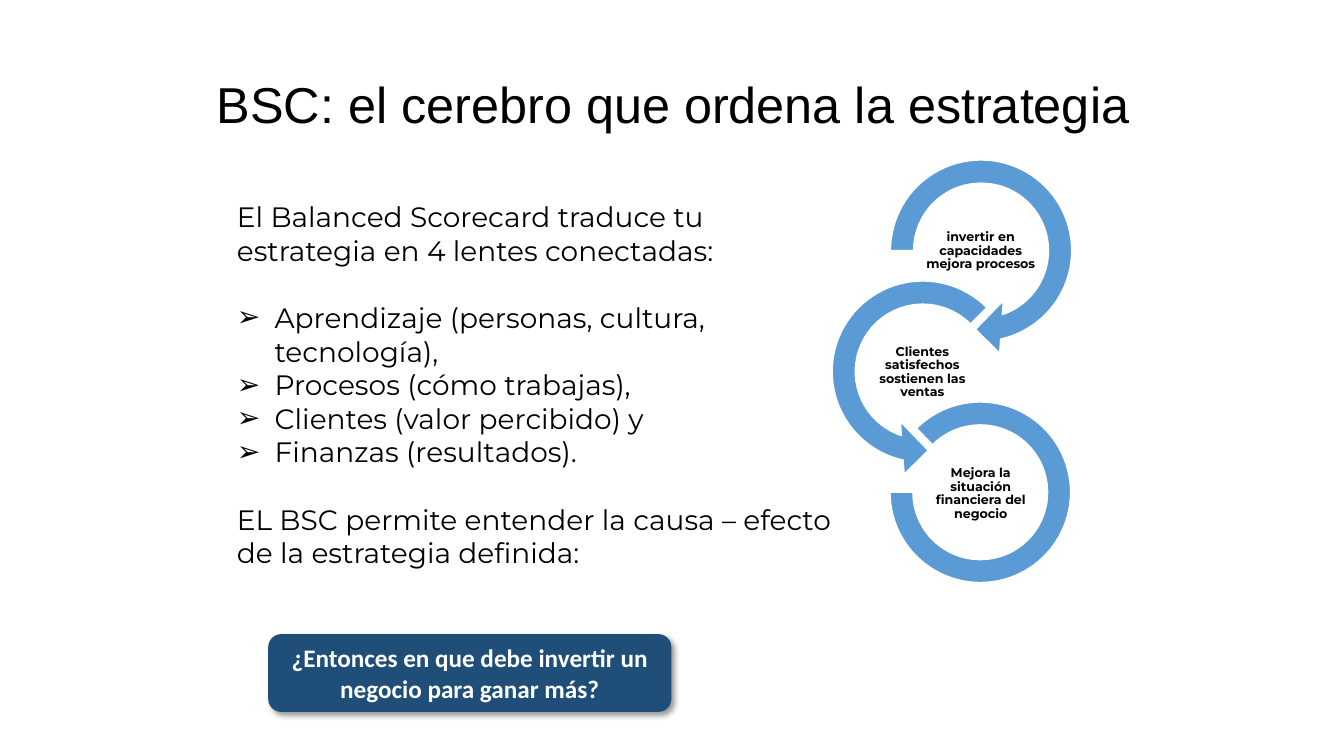
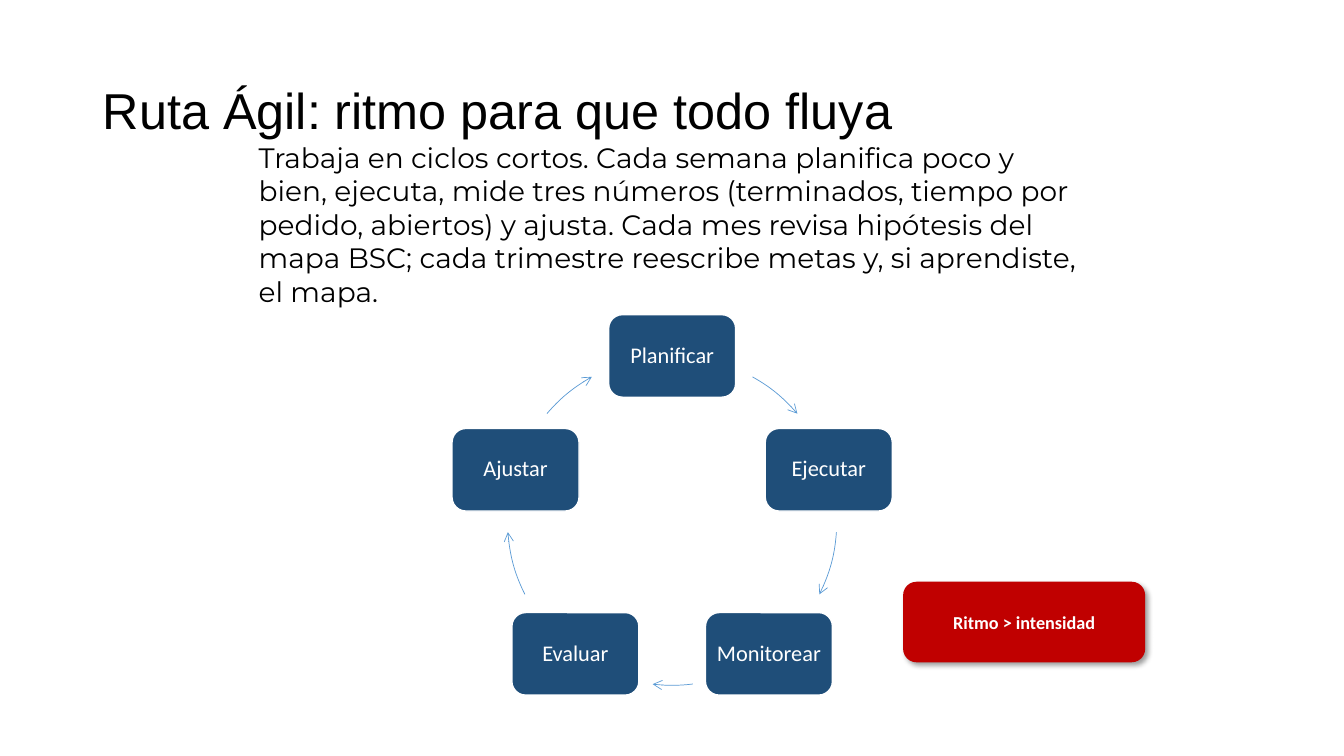
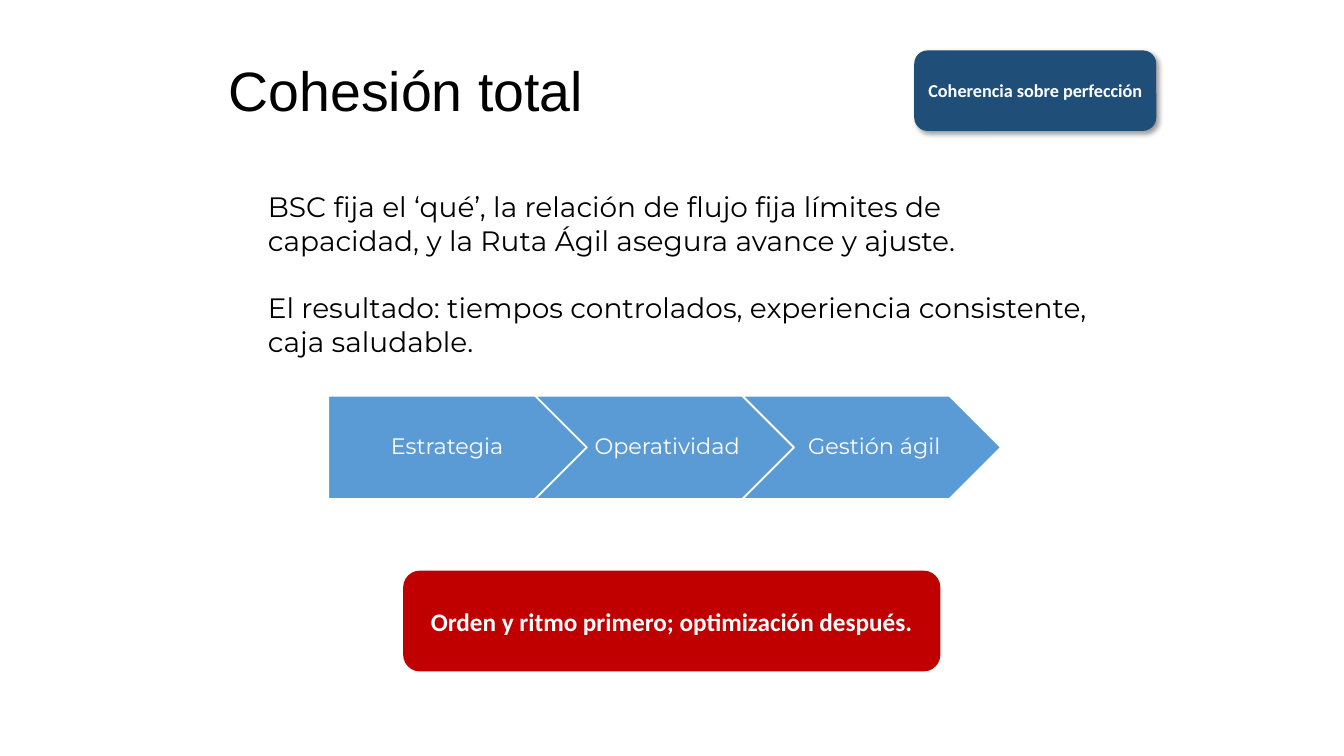
from math import cos, radians, sin

from lxml.etree import SubElement
from pptx import Presentation
from pptx.dml.color import RGBColor
from pptx.enum.shapes import MSO_SHAPE
from pptx.enum.text import MSO_ANCHOR, PP_ALIGN
from pptx.oxml.ns import qn
from pptx.util import Cm, Pt

BLACK, WHITE = "000000", "FFFFFF"
NAVY, BLUE, RED = "1F4E79", "5B9BD5", "C00000"
HEAD, BODY, LABEL = "Arial", "Montserrat", "Calibri"


def color(code):
    return RGBColor.from_string(code)


def place(box):
    return [Cm(side) for side in box]


def add_bullet(para):
    props = para._p.get_or_add_pPr()
    props.set("marL", str(Cm(0.95)))
    props.set("indent", str(-Cm(0.95)))
    SubElement(props, qn("a:buFont"), typeface="Arial")
    SubElement(props, qn("a:buChar"), char="➢")


def write(frame, *lines, size=20, font=BODY, ink=BLACK, bold=False, align=PP_ALIGN.LEFT,
          anchor=MSO_ANCHOR.TOP, inset=(0.25, 0.13, 0.25, 0.13), space=1.0,
          bullets=(), gaps=()):
    frame.word_wrap = True
    frame.vertical_anchor = anchor
    sides = [Cm(side) for side in inset]
    frame.margin_left, frame.margin_top, frame.margin_right, frame.margin_bottom = sides
    for index, line in enumerate(lines):
        para = frame.add_paragraph() if index else frame.paragraphs[0]
        if index in bullets:
            add_bullet(para)
        if index in gaps:
            para.space_before = Pt(24)
        para.alignment = align
        para.line_spacing = space
        run = para.add_run()
        run.text = line
        run.font.size = Pt(size)
        run.font.name = font
        run.font.bold = bold
        run.font.color.rgb = color(ink)


def add_text(slide, box, *lines, **style):
    write(slide.shapes.add_textbox(*place(box)).text_frame, *lines, **style)


def add_title(slide, box, words, size=36):
    add_text(slide, box, words, size=size, font=HEAD, anchor=MSO_ANCHOR.MIDDLE, space=0.9)


def add_form(slide, kind, box, fill, line=None, adjust=()):
    form = slide.shapes.add_shape(kind, *place(box))
    form.shadow.inherit = False
    form.fill.solid()
    form.fill.fore_color.rgb = color(fill)
    if line:
        form.line.color.rgb = color(line)
        form.line.width = Pt(1)
    else:
        form.line.fill.background()
    for index, value in enumerate(adjust):
        form.adjustments[index] = value
    return form


def add_shade(form):
    effects = form._element.spPr.find(qn("a:effectLst"))
    shade = SubElement(effects, qn("a:outerShdw"), blurRad=str(Pt(4)), dist=str(Pt(3)),
                       dir="2700000", algn="tl", rotWithShape="0")
    tint = SubElement(shade, qn("a:srgbClr"), val=BLACK)
    SubElement(tint, qn("a:alpha"), val="40000")


def add_badge(slide, box, words, fill, size=13, shade=True):
    form = add_form(slide, MSO_SHAPE.ROUNDED_RECTANGLE, box, fill)
    if shade:
        add_shade(form)
    write(form.text_frame, words, size=size, font=LABEL, ink=WHITE, bold=True,
          align=PP_ALIGN.CENTER, anchor=MSO_ANCHOR.MIDDLE)


def add_step(slide, kind, box, words, fill, font, inset):
    form = add_form(slide, kind, box, fill, WHITE)
    write(form.text_frame, words, size=16, font=font, ink=WHITE, align=PP_ALIGN.CENTER,
          anchor=MSO_ANCHOR.MIDDLE, inset=inset, space=0.9)


def add_arc(slide, box, start, end):
    arc = slide.shapes.add_shape(MSO_SHAPE.ARC, *place(box))
    arc.shadow.inherit = False
    arc.fill.background()
    arc.line.color.rgb = color(BLUE)
    arc.line.width = Pt(0.5)
    arc.adjustments[0] = start * 0.6
    arc.adjustments[1] = end * 0.6
    SubElement(arc.line._get_or_add_ln(), qn("a:tailEnd"), type="arrow")


def add_rings(slide):
    rings = [
        (MSO_SHAPE.CIRCULAR_ARROW, (22.07, 3.66, 5.31, 5.31),
         (0.11, 11.42, 45, 108, 0.125), 23.24, "invertir en capacidades mejora procesos"),
        (MSO_SHAPE.LEFT_CIRCULAR_ARROW, (20.6, 6.71, 5.31, 5.31),
         (0.11, 11.42, 63, 189, 0.125), 21.77, "Clientes satisfechos sostienen las ventas"),
        (MSO_SHAPE.BLOCK_ARC, (22.43, 10.13, 4.55, 4.55),
         (135, 108, 0.127), 23.24, "Mejora la situación financiera del negocio"),
    ]
    for index, (kind, box, adjust, left, words) in enumerate(rings):
        add_form(slide, kind, box, BLUE, WHITE, adjust)
        add_text(slide, (left, 5.59 + index * 3.06, 2.95, 1.47), words, size=9, bold=True,
                 align=PP_ALIGN.CENTER, anchor=MSO_ANCHOR.MIDDLE, inset=(0.03,) * 4, space=0.9)


def add_cycle(slide, names, spans, center=(16.94, 13.12), radius=4.15, width=3.2, height=2.08):
    mid_x, mid_y = center
    ring = (mid_x - radius, mid_y - radius, 2 * radius, 2 * radius)
    for index, (name, span) in enumerate(zip(names, spans)):
        angle = radians(index * 360 / len(names) - 90)
        box = (mid_x + radius * cos(angle) - width / 2,
               mid_y + radius * sin(angle) - height / 2, width, height)
        add_step(slide, MSO_SHAPE.ROUNDED_RECTANGLE, box, name, NAVY, LABEL, (0.15,) * 4)
        add_arc(slide, ring, *span)


def add_chain(slide, names):
    for index, name in enumerate(names):
        kind = MSO_SHAPE.CHEVRON if index else MSO_SHAPE.PENTAGON
        add_step(slide, kind, (8.28 + index * 5.22, 9.98, 6.5, 2.59), name, BLUE, BODY,
                 (0.18, 0.13, 0.05, 0.13))


def draw_brain(slide):
    add_title(slide, (5.21, 1.12, 24.99, 3.18), "BSC: el cerebro que ordena la estrategia")
    add_text(slide, (5.72, 4.9, 15.55, 9.65),
             "El Balanced Scorecard traduce tu estrategia en 4 lentes conectadas:",
             "Aprendizaje (personas, cultura, tecnología),",
             "Procesos (cómo trabajas),",
             "Clientes (valor percibido) y",
             "Finanzas (resultados).",
             "EL BSC permite entender la causa – efecto de la estrategia definida:",
             bullets=range(1, 5), gaps=(1, 5))
    add_badge(slide, (6.76, 15.98, 10.16, 1.96),
              "¿Entonces en que debe invertir un negocio para ganar más?", NAVY, size=18)
    add_rings(slide)


def draw_route(slide):
    add_title(slide, (2.34, 1.02, 29.21, 3.68), "Ruta Ágil: ritmo para que todo fluya")
    add_text(slide, (6.27, 3.4, 21.34, 4.52),
             "Trabaja en ciclos cortos. Cada semana planifica poco y bien, ejecuta, mide tres "
             "números (terminados, tiempo por pedido, abiertos) y ajusta. Cada mes revisa "
             "hipótesis del mapa BSC; cada trimestre reescribe metas y, si aprendiste, el mapa.")
    add_badge(slide, (22.76, 14.66, 6.1, 2.03), "Ritmo > intensidad", RED)
    add_cycle(slide, ("Planificar", "Ejecutar", "Monitorear", "Evaluar", "Ajustar"),
              ((299.2, 319.5), (4, 26.6), (82.8, 96.8), (153.4, 176), (220.5, 240.8)))


def draw_whole(slide):
    add_title(slide, (5.51, 0.76, 12.9, 3.18), "Cohesión total", size=39.6)
    add_text(slide, (6.5, 4.65, 21.34, 4.52),
             "BSC fija el ‘qué’, la relación de flujo fija límites de capacidad, y la Ruta Ágil "
             "asegura avance y ajuste.",
             "El resultado: tiempos controlados, experiencia consistente, caja saludable.",
             gaps=(1,))
    add_badge(slide, (10.16, 14.38, 13.54, 2.54),
              "Orden y ritmo primero; optimización después.", RED, size=18, shade=False)
    add_badge(slide, (23.04, 1.27, 6.1, 2.03), "Coherencia sobre perfección", NAVY)
    add_chain(slide, ("Estrategia", "Operatividad", "Gestión ágil"))


def main():
    deck = Presentation()
    deck.slide_width, deck.slide_height = Cm(33.87), Cm(19.05)
    for draw in (draw_brain, draw_route, draw_whole):
        draw(deck.slides.add_slide(deck.slide_layouts[6]))
    deck.save("out.pptx")


if __name__ == "__main__":
    main()
